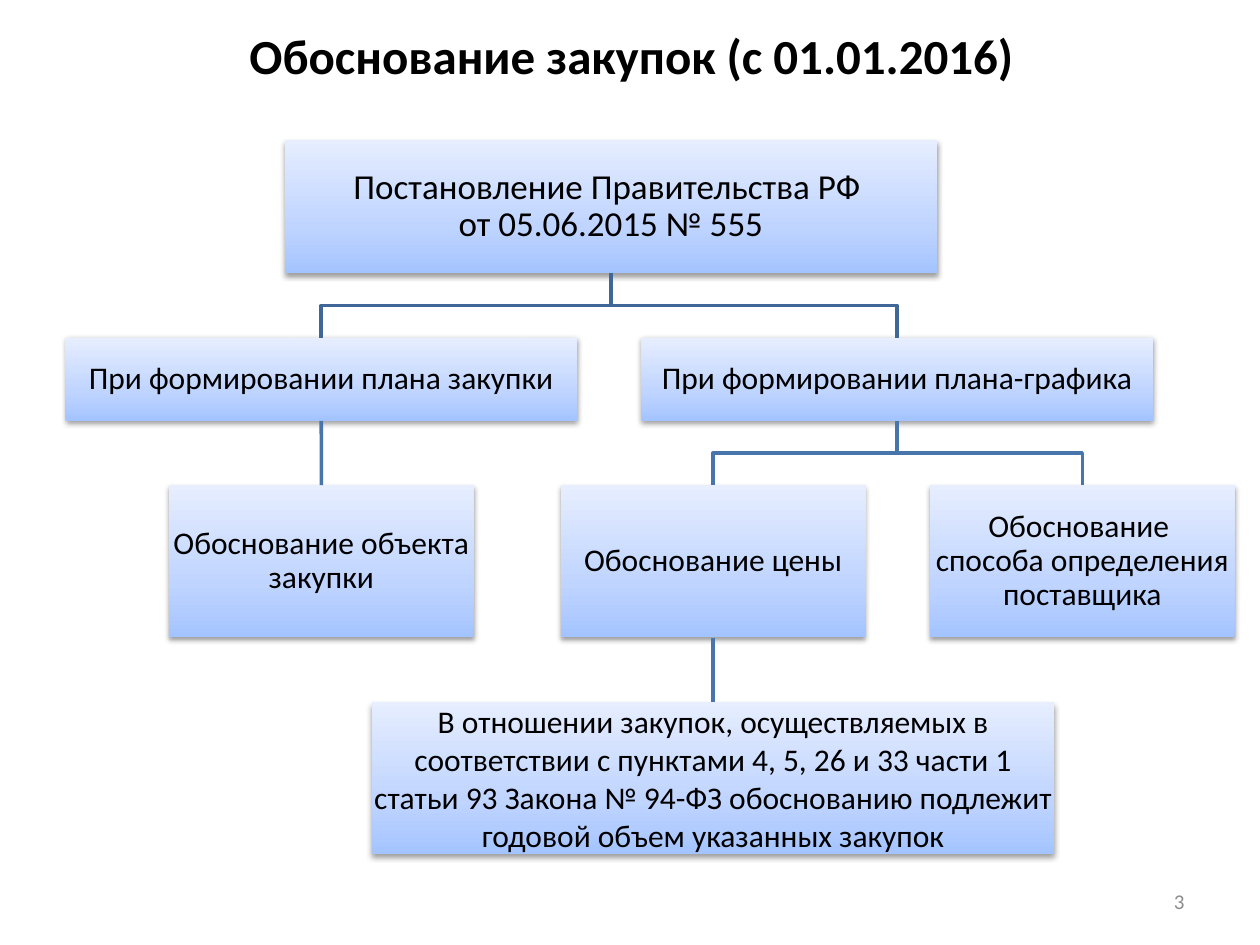
from dataclasses import dataclass
from typing import Optional

from lxml.etree import SubElement
from pptx import Presentation
from pptx.dml.color import RGBColor
from pptx.enum.shapes import MSO_CONNECTOR, MSO_SHAPE
from pptx.enum.text import MSO_ANCHOR, PP_ALIGN
from pptx.oxml import parse_xml
from pptx.oxml.ns import nsdecls, qn
from pptx.util import Inches, Pt

WIDTH, HEIGHT = Inches(10), Inches(7.5)
FONT = "Calibri"
COLORS = {
    "text": "000000",
    "number": "8C8C8C",
    "upper_line": "3F6797",
    "lower_line": "4875AC",
    "box_bottom": "A4C4FF",
    "box_middle": "BFD4FF",
    "box_top": "E6EEFF",
    "shadow": "000000",
}
GRADIENT = ((0, "box_bottom"), (35, "box_middle"), (100, "box_top"))

# Rows of the chart: heights in inches, separated by one equal gap
FIRST_ROW_TOP, ROW_GAP = 1.11, 0.51
ROW_HEIGHTS = (1.06, 0.66, 1.21, 1.21)
ROW_TOPS = [FIRST_ROW_TOP + sum(ROW_HEIGHTS[:row]) + row * ROW_GAP
            for row in range(len(ROW_HEIGHTS))]


@dataclass(frozen=True)
class Box:
    """A box of the chart; center and width are shares of the slide's width."""
    key: str
    text: str
    row: int
    center: float
    width: float
    parent: Optional[str] = None
    size: int = 18
    spacing: float = 0.9


BOXES = (
    Box("decree", "Постановление Правительства РФ \vот 05.06.2015 № 555",
        0, 0.485, 0.518, size=20),
    Box("plan", "При формировании плана закупки", 1, 0.255, 0.406, "decree"),
    Box("schedule", "При формировании плана-графика", 1, 0.712, 0.406, "decree"),
    Box("object", "Обоснование объекта закупки", 2, 0.255, 0.242, "plan"),
    Box("price", "Обоснование цены", 2, 0.566, 0.242, "schedule"),
    Box("supplier", "Обоснование \vспособа определения поставщика",
        2, 0.859, 0.242, "schedule"),
    Box("volume", "В отношении закупок, осуществляемых в соответствии с пунктами "
        "4, 5, 26 и 33 части 1 статьи 93 Закона № 94-ФЗ обоснованию подлежит "
        "годовой объем указанных закупок", 3, 0.566, 0.541, "price", spacing=1.0),
)


def write_text(shape, text: str, *, size: int, color: str = "text", bold: bool = False,
               align=PP_ALIGN.CENTER, spacing: float = 1.0, inset: Optional[float] = None) -> None:
    frame = shape.text_frame
    frame.word_wrap = True
    frame.vertical_anchor = MSO_ANCHOR.MIDDLE
    if inset is not None:
        frame.margin_left = frame.margin_right = Inches(inset)
        frame.margin_top = frame.margin_bottom = Inches(inset)
    paragraph = frame.paragraphs[0]
    paragraph.text = text
    paragraph.alignment = align
    paragraph.line_spacing = spacing
    for run in paragraph.runs:
        run.font.name = FONT
        run.font.size = Pt(size)
        run.font.bold = bold
        run.font.color.rgb = RGBColor.from_string(COLORS[color])


def apply_gradient(shape) -> None:
    stops = "".join(f'<a:gs pos="{share * 1000}"><a:srgbClr val="{COLORS[name]}"/></a:gs>'
                    for share, name in GRADIENT)
    shape.fill.background()
    properties = shape._element.spPr
    properties.replace(properties.find(qn("a:noFill")), parse_xml(
        f'<a:gradFill {nsdecls("a")} rotWithShape="1"><a:gsLst>{stops}</a:gsLst>'
        '<a:lin ang="16200000" scaled="0"/></a:gradFill>'))


def apply_shadow(shape) -> None:
    shape.shadow.inherit = False
    effects = shape._element.spPr.find(qn("a:effectLst"))
    effects.append(parse_xml(
        f'<a:outerShdw {nsdecls("a")} blurRad="{Pt(3.1)}" dist="{Pt(1.6)}" dir="5400000" '
        f'rotWithShape="0"><a:srgbClr val="{COLORS["shadow"]}"><a:alpha val="38000"/>'
        '</a:srgbClr></a:outerShdw>'))


def draw_box(slide, box: Box):
    shape = slide.shapes.add_shape(
        MSO_SHAPE.RECTANGLE, int(WIDTH * (box.center - box.width / 2)),
        Inches(ROW_TOPS[box.row]), int(WIDTH * box.width), Inches(ROW_HEIGHTS[box.row]))
    shape.line.fill.background()
    apply_gradient(shape)
    apply_shadow(shape)
    write_text(shape, box.text, size=box.size, spacing=box.spacing, inset=0.01)
    return shape


def draw_link(slide, parent: Box, child: Box, shapes: dict) -> None:
    """Join two boxes: straight when they share a center, else with two bends."""
    start_x, end_x = int(WIDTH * parent.center), int(WIDTH * child.center)
    end_y = Inches(ROW_TOPS[child.row])
    start_y = end_y - Inches(ROW_GAP)
    middle_y = (start_y + end_y) // 2
    if parent.center == child.center:
        link = slide.shapes.add_connector(MSO_CONNECTOR.STRAIGHT, start_x, start_y, end_x, end_y)
        link.begin_connect(shapes[parent.key], 2)
        link.end_connect(shapes[child.key], 0)
        SubElement(link._element.spPr, qn("a:effectLst"))
    else:
        builder = slide.shapes.build_freeform(start_x, start_y)
        builder.add_line_segments(
            [(start_x, middle_y), (end_x, middle_y), (end_x, end_y)], close=False)
        link = builder.convert_to_shape()
        link.fill.background()
        link.shadow.inherit = False
    link.line.width = Pt(2)
    upper = parent.row == 0
    link.line.color.rgb = RGBColor.from_string(COLORS["upper_line" if upper else "lower_line"])


def main() -> None:
    presentation = Presentation()
    presentation.slide_width, presentation.slide_height = WIDTH, HEIGHT
    slide = presentation.slides.add_slide(presentation.slide_layouts[5])

    title = slide.shapes.title
    title.left, title.top = Inches(0.51), Inches(0.09)
    title.width, title.height = Inches(9), Inches(0.69)
    write_text(title, "Обоснование закупок (с 01.01.2016)", size=28, bold=True)

    boxes = {box.key: box for box in BOXES}
    shapes = {box.key: draw_box(slide, box) for box in BOXES}
    for box in BOXES:
        if box.parent:
            draw_link(slide, boxes[box.parent], box, shapes)

    number = slide.shapes.add_textbox(Inches(7.17), Inches(6.95), Inches(2.33), Inches(0.4))
    write_text(number, "3", size=12, color="number", align=PP_ALIGN.RIGHT)

    presentation.save("out.pptx")


if __name__ == "__main__":
    main()
